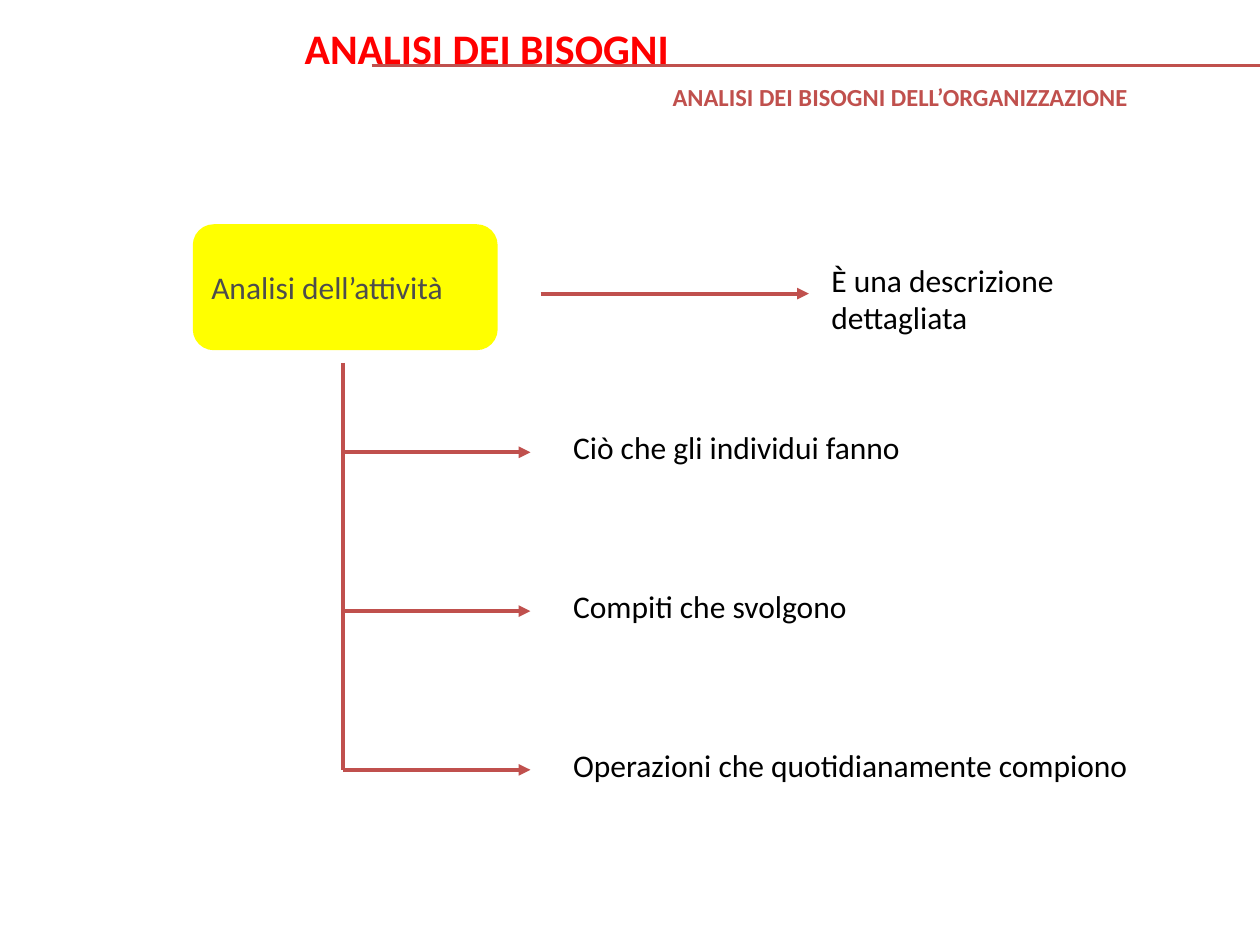
from pptx import Presentation
from pptx.dml.color import RGBColor
from pptx.enum.shapes import MSO_CONNECTOR, MSO_SHAPE
from pptx.enum.text import MSO_ANCHOR, PP_ALIGN
from pptx.oxml.ns import qn
from pptx.util import Inches, Pt
from lxml.etree import SubElement

INK = {"brick": "C0504D", "red": "FF0000", "yellow": "FFFF00",
       "gray": "4D4D4D", "black": "000000"}
FONT = "Calibri"

HEADS = [
    ("ANALISI DEI BISOGNI DELL’ORGANIZZAZIONE", (5.24, 0.6, 4.73, 0.33), 14, "brick"),
    ("ANALISI DEI BISOGNI", (2.32, 0.13, 3.94, 0.5), 24, "red"),
]
TOPIC = "Analisi dell’attività"
DETAIL = "È una descrizione dettagliata"
ITEMS = [
    ("Ciò che gli individui fanno", 3.54),
    ("Compiti che svolgono", 3.54),
    ("Operazioni che quotidianamente compiono", 5.2),
]
TRUNK, TOP, FIRST, STEP = 2.72, 2.88, 3.59, 1.26


def color(name):
    return RGBColor.from_string(INK[name])


def write(shape, text, size, ink, bold=False):
    para = shape.text_frame.paragraphs[0]
    para.text = text
    para.alignment = PP_ALIGN.LEFT
    font = para.runs[0].font
    font.name, font.size, font.bold = FONT, Pt(size), bold
    font.color.rgb = color(ink)


def label(slide, text, area, size=18, ink="black", bold=False):
    box = slide.shapes.add_textbox(*map(Inches, area))
    box.text_frame.word_wrap = True
    write(box, text, size, ink, bold)


def rule(slide, start, end, width=2.25, arrow=False):
    line = slide.shapes.add_connector(
        MSO_CONNECTOR.STRAIGHT, *map(Inches, start + end))
    line.line.color.rgb = color("brick")
    line.line.width = Pt(width)
    if arrow:
        SubElement(line.line._get_or_add_ln(), qn("a:tailEnd"), type="triangle")
    SubElement(line._element.spPr, qn("a:effectLst"))


def topic(slide):
    box = slide.shapes.add_shape(
        MSO_SHAPE.ROUNDED_RECTANGLE, *map(Inches, (1.53, 1.78, 2.42, 1)))
    box.shadow.inherit = False
    box.fill.solid()
    box.fill.fore_color.rgb = color("yellow")
    box.line.fill.background()
    box.text_frame.word_wrap = False
    box.text_frame.vertical_anchor = MSO_ANCHOR.MIDDLE
    write(box, TOPIC, 18, "gray")


def main():
    deck = Presentation()
    deck.slide_width, deck.slide_height = Inches(10), Inches(7.5)
    slide = deck.slides.add_slide(deck.slide_layouts[6])

    rule(slide, (2.95, 0.52), (10, 0.52), 1.5)
    for text, area, size, ink in HEADS:
        label(slide, text, area, size, ink, True)

    topic(slide)
    rule(slide, (4.29, 2.33), (6.42, 2.33), arrow=True)
    label(slide, DETAIL, (6.5, 2.02, 2.76, 0.7))

    last = FIRST + STEP * (len(ITEMS) - 1)
    rule(slide, (TRUNK, TOP), (TRUNK, last))
    for i, (text, width) in enumerate(ITEMS):
        y = FIRST + STEP * i
        rule(slide, (TRUNK, y), (4.21, y), arrow=True)
        label(slide, text, (4.45, y - 0.24, width, 0.4))

    deck.save("out.pptx")


if __name__ == "__main__":
    main()
